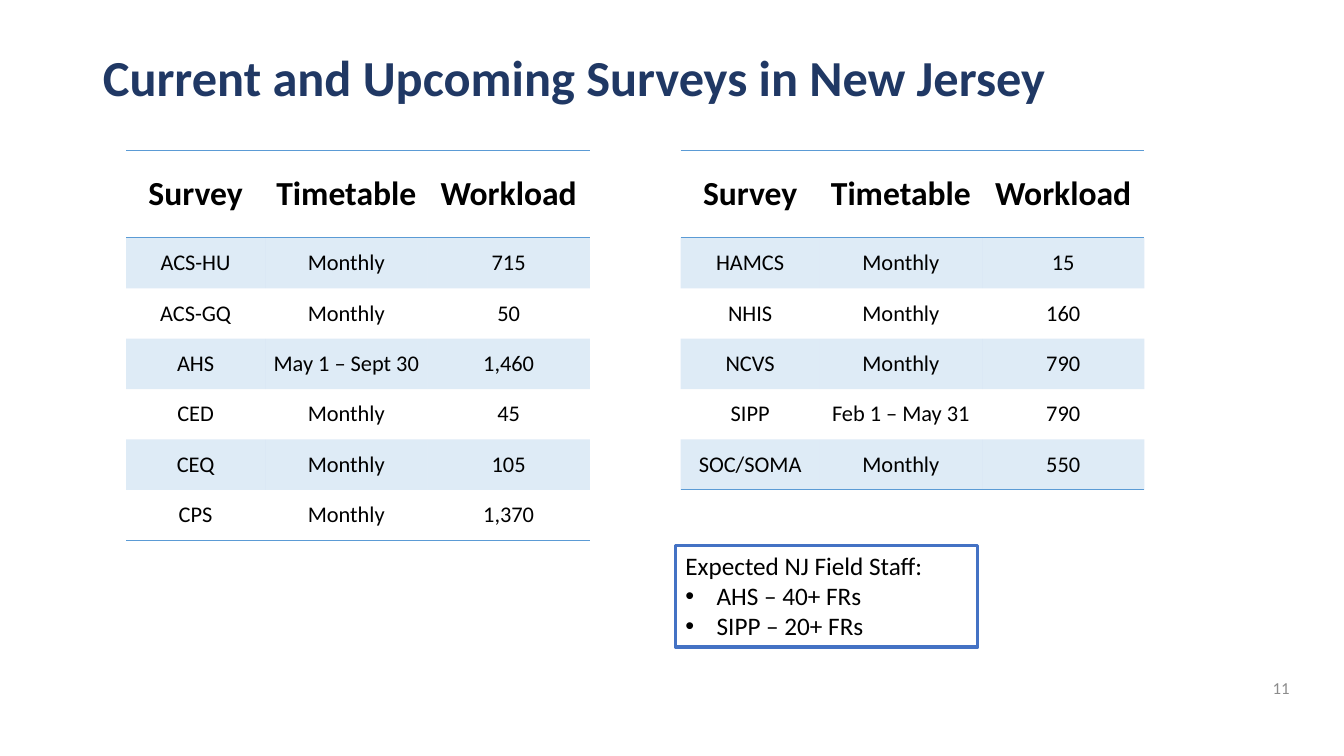
import pptx
import pptx.util
import pptx.dml.color
import pptx.enum.dml
import pptx.enum.shapes
import pptx.enum.text
import pptx.oxml.ns
import lxml.etree

SLIDE_W, SLIDE_H = 13.33, 7.5
FONT = "Calibri"
COLORS = {
    "title": "203864",
    "text": "000000",
    "rule": "5B9BD5",
    "frame": "4472C4",
    "number": "8C8C8C",
}
COLUMN_WIDTHS = (1.38, 1.61, 1.61)
HEADER_HEIGHT, ROW_HEIGHT = 0.87, 0.5
TABLE_TOP, TABLE_LEFT, TABLE_PITCH = 1.49, 1.25, 5.5
HEADINGS = ("Survey", "Timetable", "Workload")
SURVEYS = (
    (
        ("ACS-HU", "Monthly", "715"),
        ("ACS-GQ", "Monthly", "50"),
        ("AHS", "May 1 – Sept 30", "1,460"),
        ("CED", "Monthly", "45"),
        ("CEQ", "Monthly", "105"),
        ("CPS", "Monthly", "1,370"),
    ),
    (
        ("HAMCS", "Monthly", "15"),
        ("NHIS", "Monthly", "160"),
        ("NCVS", "Monthly", "790"),
        ("SIPP", "Feb 1 – May 31", "790"),
        ("SOC/SOMA", "Monthly", "550"),
    ),
)
STAFF_LINES = ("Expected NJ Field Staff:", "AHS – 40+ FRs", "SIPP – 20+ FRs")

ALIGN = pptx.enum.text.PP_ALIGN
ANCHOR = pptx.enum.text.MSO_ANCHOR


def color(name):
    return pptx.dml.color.RGBColor.from_string(COLORS[name])


def inches(*lengths):
    return [pptx.util.Inches(length) for length in lengths]


def add_xml(parent, tag, **attributes):
    child = lxml.etree.SubElement(parent, pptx.oxml.ns.qn(tag))
    for key, value in attributes.items():
        child.set(key, str(value))
    return child


def format_runs(paragraph, size, color_name, bold=False, align=ALIGN.LEFT):
    paragraph.alignment = align
    for run in paragraph.runs:
        run.font.name = FONT
        run.font.size = pptx.util.Pt(size)
        run.font.bold = bold
        run.font.color.rgb = color(color_name)


def place_title(slide, box):
    title = slide.shapes.title
    title.left, title.top, title.width, title.height = inches(*box)
    frame = title.text_frame
    frame.text = "Current and Upcoming Surveys in New Jersey"
    frame.auto_size = pptx.enum.text.MSO_AUTO_SIZE.NONE
    frame.vertical_anchor = ANCHOR.TOP
    frame.paragraphs[0].line_spacing = 0.9
    format_runs(frame.paragraphs[0], 36, "title", bold=True)


def set_borders(cell, ruled_edges):
    properties = cell._tc.get_or_add_tcPr()
    for edge in "LRTB":
        line = add_xml(properties, f"a:ln{edge}", w=pptx.util.Pt(1))
        if edge in ruled_edges:
            fill = add_xml(line, "a:solidFill")
            add_xml(fill, "a:srgbClr", val=COLORS["rule"])
        else:
            add_xml(line, "a:noFill")


def shade(cell, banded):
    if not banded:
        cell.fill.background()
        return
    cell.fill.solid()
    cell.fill.fore_color.rgb = color("rule")
    tint = cell._tc.tcPr.find(".//" + pptx.oxml.ns.qn("a:solidFill") + "[last()]/"
                              + pptx.oxml.ns.qn("a:srgbClr"))
    for candidate in cell._tc.tcPr.findall(pptx.oxml.ns.qn("a:solidFill")):
        tint = candidate[0]
    add_xml(tint, "a:alpha", val=20000)


def place_survey_table(slide, left, top, surveys):
    rows = (HEADINGS,) + surveys
    height = HEADER_HEIGHT + ROW_HEIGHT * len(surveys)
    box = inches(left, top, sum(COLUMN_WIDTHS), height)
    table = slide.shapes.add_table(len(rows), len(HEADINGS), *box).table
    table.first_row = table.horz_banding = False
    for column, width in zip(table.columns, COLUMN_WIDTHS):
        column.width = pptx.util.Inches(width)
    for r, values in enumerate(rows):
        is_header = r == 0
        table.rows[r].height = pptx.util.Inches(HEADER_HEIGHT if is_header else ROW_HEIGHT)
        ruled_edges = ("T" if r <= 1 else "") + ("B" if r in (0, len(surveys)) else "")
        for c, value in enumerate(values):
            cell = table.cell(r, c)
            cell.margin_left = cell.margin_right = cell.margin_top = cell.margin_bottom = 0
            cell.vertical_anchor = ANCHOR.MIDDLE
            set_borders(cell, ruled_edges)
            shade(cell, banded=r % 2 == 1)
            cell.text_frame.text = value
            format_runs(cell.text_frame.paragraphs[0], 24 if is_header else 16,
                        "text", bold=is_header, align=ALIGN.CENTER)


def place_staff_note(slide, box):
    note = slide.shapes.add_shape(pptx.enum.shapes.MSO_SHAPE.RECTANGLE, *inches(*box))
    note.shadow.inherit = False
    note.fill.background()
    note.line.color.rgb = color("frame")
    note.line.width = pptx.util.Pt(2.25)
    frame = note.text_frame
    frame.word_wrap = True
    frame.vertical_anchor = ANCHOR.TOP
    frame.text = "\n".join(STAFF_LINES)
    for index, paragraph in enumerate(frame.paragraphs):
        if index:
            properties = paragraph._p.get_or_add_pPr()
            indent = pptx.util.Inches(0.31)
            properties.set("marL", str(indent))
            properties.set("indent", str(-indent))
            add_xml(properties, "a:buFont", typeface="Arial")
            add_xml(properties, "a:buChar", char="•")
        format_runs(paragraph, 18, "text")


def place_slide_number(slide, box):
    frame = slide.shapes.add_textbox(*inches(*box)).text_frame
    frame.word_wrap = True
    frame.vertical_anchor = ANCHOR.MIDDLE
    frame.text = "11"
    format_runs(frame.paragraphs[0], 12, "number", align=ALIGN.RIGHT)


def main():
    deck = pptx.Presentation()
    deck.slide_width, deck.slide_height = inches(SLIDE_W, SLIDE_H)
    slide = deck.slides.add_slide(deck.slide_layouts.get_by_name("Title Only"))
    place_title(slide, (0.92, 0.48, 11.5, 0.71))
    place_slide_number(slide, (9.89, 6.62, 3, 0.4))
    for index, surveys in enumerate(SURVEYS):
        place_survey_table(slide, TABLE_LEFT + index * TABLE_PITCH, TABLE_TOP, surveys)
    place_staff_note(slide, (6.7, 5.41, 3, 1.01))
    deck.save("out.pptx")


if __name__ == "__main__":
    main()
